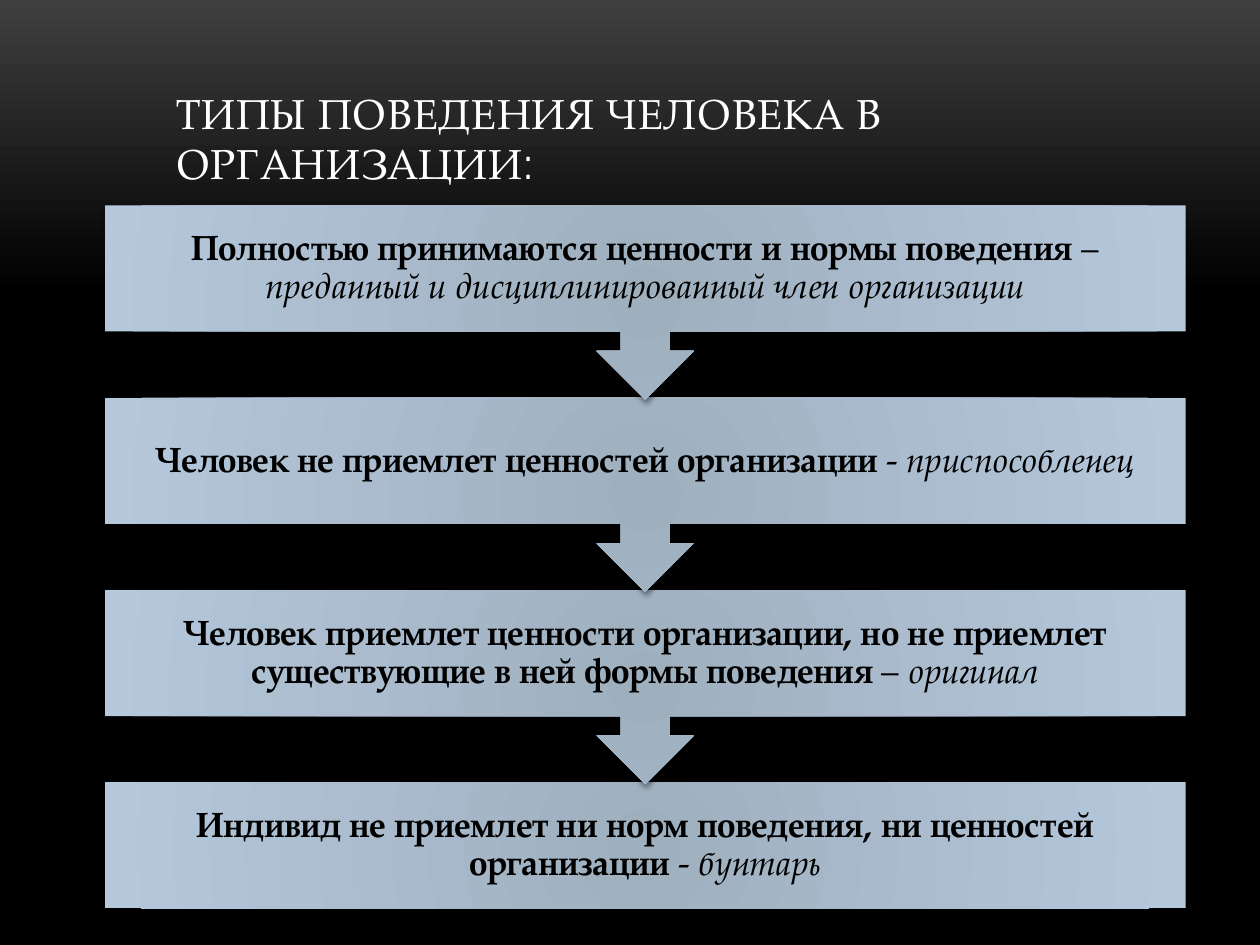
import pptx
import pptx.util
import pptx.dml.color
import pptx.enum.shapes
import pptx.enum.text
import pptx.oxml
import pptx.oxml.ns

Inches = pptx.util.Inches
Pt = pptx.util.Pt
RGB = pptx.dml.color.RGBColor
KIND = pptx.enum.shapes.MSO_SHAPE
ANCHOR = pptx.enum.text.MSO_ANCHOR
ALIGN = pptx.enum.text.PP_ALIGN

WHITE = RGB(0xFF, 0xFF, 0xFF)
BLACK = RGB(0, 0, 0)
GREY = RGB(0x3F, 0x3F, 0x3F)
STEEL = RGB(0x9E, 0xAF, 0xBE)
SKY = RGB(0xB5, 0xC8, 0xDC)

SERIF = "TeX Gyre Pagella"
NS = pptx.oxml.ns.nsdecls("a")
DOWN = '<a:lin ang="5400000" scaled="0"/>'
ROUND = ('<a:path path="circle"><a:fillToRect l="100000" t="100000"'
         ' r="100000" b="100000"/></a:path>')

HEAD = {"size": Pt(24), "name": SERIF, "bold": False}
BODY = {"size": Pt(20), "name": SERIF}
STRONG = {**BODY, "bold": True}
PLAIN = {**BODY, "bold": False}
SLANT = {**PLAIN, "italic": True}

STEPS = [
    ("Полностью принимаются ценности и нормы поведения ", "– ",
     "преданный и дисциплинированный член организации"),
    ("Человек не приемлет ценностей организации ", "- ", "приспособленец"),
    ("Человек приемлет ценности организации, но не приемлет "
     "существующие в ней формы поведения ", "– ", "оригинал"),
    ("Индивид не приемлет ни норм поведения, ни ценностей организации ",
     "- ", "бунтарь"),
]


def shade(owner, fill, stops, mode):
    fill.gradient()
    grad = owner.find(".//" + pptx.oxml.ns.qn("a:gradFill"))
    for child in list(grad):
        grad.remove(child)
    marks = "".join(
        f'<a:gs pos="{pos * 1000}"><a:srgbClr val="{color}"/></a:gs>'
        for pos, color in stops)
    new = pptx.oxml.parse_xml(
        f'<a:gradFill {NS}><a:gsLst>{marks}</a:gsLst>{mode}</a:gradFill>')
    for child in list(new):
        grad.append(child)


def add_run(para, text, style, color):
    run = para.add_run()
    run.text = text
    for key, value in style.items():
        setattr(run.font, key, value)
    run.font.color.rgb = color
    return run


def add_text(slide, box, **frame):
    area = slide.shapes.add_textbox(*map(Inches, box)).text_frame
    for key, value in {"word_wrap": True, **frame}.items():
        setattr(area, key, value)
    return area.paragraphs[0]


def add_title(slide, box):
    para = add_text(slide, box, vertical_anchor=ANCHOR.BOTTOM)
    parts = [("ТИПЫ ПОВЕДЕНИЯ ЧЕЛОВЕКА В ОРГАНИЗАЦИИ", SERIF),
             (":", "Arial Narrow")]
    for text, face in parts:
        run = add_run(para, text, {**HEAD, "name": face}, WHITE)
        run.font._element.set("spc", "50")


def add_step(slide, box, words, last):
    left, top, width, height = box
    kind, tall = ((KIND.RECTANGLE, height) if last
                  else (KIND.UP_ARROW_CALLOUT, 1.54))
    shape = slide.shapes.add_shape(
        kind, *map(Inches, (left, top, width, tall)))
    shape.rotation = 0 if last else 180
    shape.shadow.inherit = False
    shape.line.fill.background()
    shade(shape._element, shape.fill, [(0, STEEL), (100, SKY)], ROUND)
    glow = shape._element.spPr.find(pptx.oxml.ns.qn("a:effectLst"))
    glow.append(pptx.oxml.parse_xml(
        f'<a:outerShdw {NS} blurRad="{Pt(3)}" dist="{Pt(2)}" dir="5400000"'
        f' rotWithShape="0"><a:srgbClr val="{BLACK}"><a:alpha val="40000"/>'
        '</a:srgbClr></a:outerShdw>'))
    sides = ("left", "top", "right", "bottom")
    inset = {f"margin_{side}": Inches(0.16) for side in sides}
    para = add_text(slide, box, vertical_anchor=ANCHOR.MIDDLE, **inset)
    para.alignment = ALIGN.CENTER
    para.line_spacing = 0.9
    for text, style in zip(words, (STRONG, PLAIN, SLANT)):
        add_run(para, text, style, BLACK)


def add_flow(slide, box):
    left, top, width, height = box
    tall = 1
    end = len(STEPS) - 1
    pitch = (height - tall) / end
    for i in range(end, -1, -1):
        add_step(slide, (left, top + i * pitch, width, tall),
                 STEPS[i], i == end)


def main():
    deck = pptx.Presentation()
    deck.slide_width, deck.slide_height = Inches(10), Inches(7.5)
    slide = deck.slides.add_slide(deck.slide_layouts[6])
    shade(slide._element, slide.background.fill,
          [(0, GREY), (31, BLACK), (100, BLACK)], DOWN)
    add_title(slide, (1.3, 0.44, 7.48, 1.1))
    add_flow(slide, (0.83, 1.63, 8.58, 5.58))
    deck.save("out.pptx")


if __name__ == "__main__":
    main()
